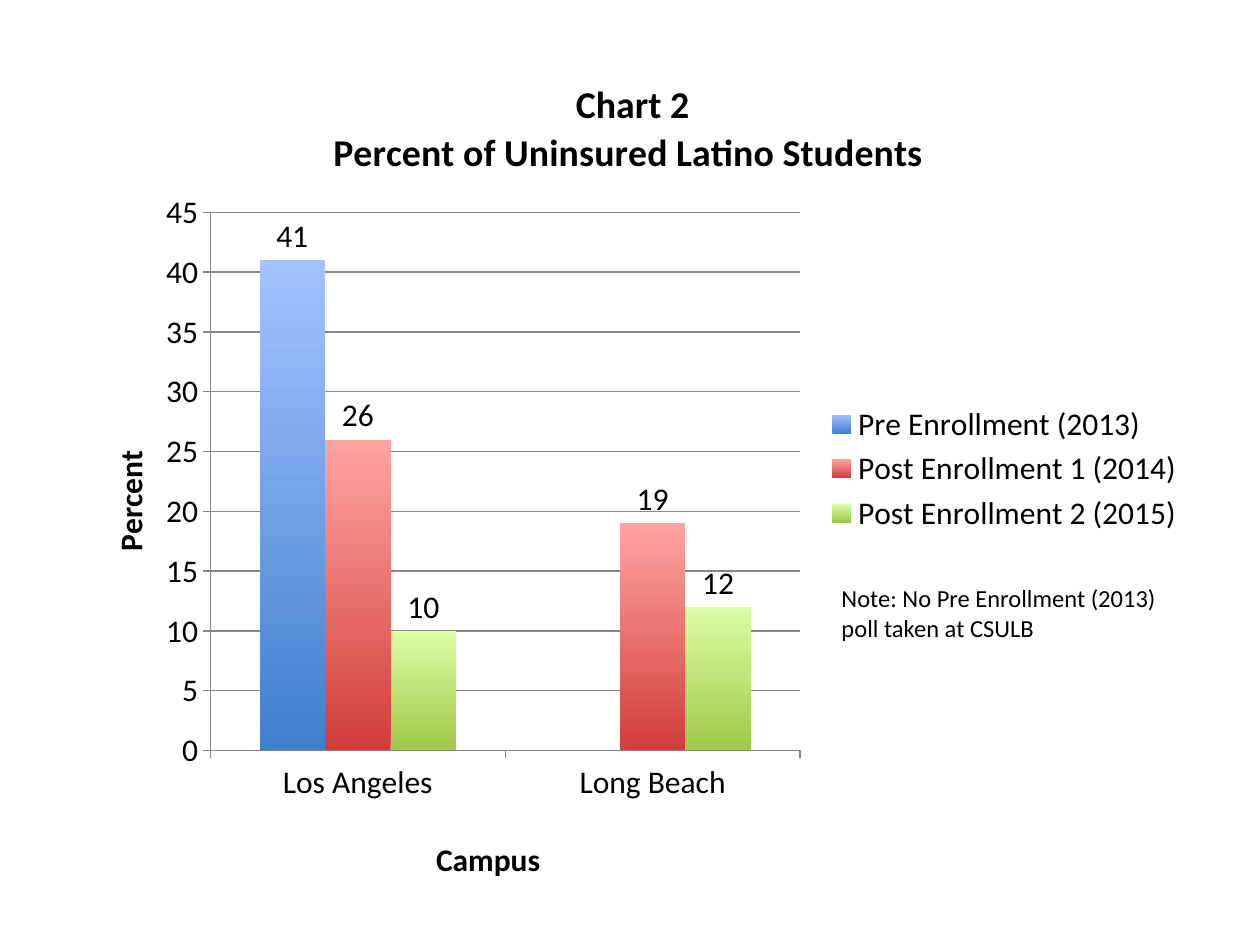
from pptx import Presentation
from pptx import util as u
from pptx.chart.data import CategoryChartData
from pptx.dml.color import RGBColor
from pptx.enum import chart as ch, text as tx
from pptx.oxml import ns, xmlchemy as xc

BLACK = RGBColor(0, 0, 0)
GRID_GRAY = RGBColor(0x86, 0x86, 0x86)
BLUE = RGBColor(0x3F, 0x80, 0xCD), RGBColor(0xA3, 0xC2, 0xFF)
RED = RGBColor(0xD0, 0x3E, 0x3A), RGBColor(0xFF, 0xA4, 0xA1)
GREEN = RGBColor(0x9F, 0xC9, 0x48), RGBColor(0xDA, 0xFF, 0xA4)

CAMPUSES = ["Los Angeles", "Long Beach"]
POLLS = [
    ("Pre Enrollment (2013)", [41, None], BLUE),
    ("Post Enrollment 1 (2014)", [26, 19], RED),
    ("Post Enrollment 2 (2015)", [10, 12], GREEN),
]


def write(frame, words, size=18, bold=False, color=BLACK, font="Calibri"):
    """Fill a text frame, one paragraph for each line of words."""
    for number, line in enumerate(words.split("\n")):
        paragraph = frame.add_paragraph() if number else frame.paragraphs[0]
        run = paragraph.add_run()
        run.text = line
        run.font.size, run.font.bold = u.Pt(size), bold
        run.font.name, run.font.color.rgb = font, color


def place(element, **fractions):
    """Fix a chart part at fractions (x, y, w, h) of the chart area."""
    layout = element.find(ns.qn("c:layout"))
    if layout is None:
        layout = xc.OxmlElement("c:layout")
        element.insert(0, layout)
    manual = xc.OxmlElement("c:manualLayout")
    layout.append(manual)
    settings = {"layoutTarget": "inner"} if "w" in fractions else {}
    settings.update(xMode="edge", yMode="edge", **fractions)
    for tag, value in settings.items():
        setting = xc.OxmlElement("c:" + tag)
        setting.set("val", str(value))
        manual.append(setting)


class Deck:
    def __init__(self, font="Calibri", size=18):
        self.font, self.size = font, size
        self.prs = Presentation()
        self.prs.slide_width, self.prs.slide_height = u.Inches(10), u.Inches(7.5)
        self.slide = self.prs.slides.add_slide(self.prs.slide_layouts[6])

    def note(self, words, left, top, width, height, size):
        box = self.slide.shapes.add_textbox(*map(u.Inches, (left, top, width, height)))
        box.text_frame.word_wrap = True
        box.text_frame.auto_size = tx.MSO_AUTO_SIZE.SHAPE_TO_FIT_TEXT
        write(box.text_frame, words, size=size, font=self.font)

    def heading(self, owner, words, size, x, y):
        """Title a chart or an axis."""
        owner.has_title = True
        title = owner.chart_title if hasattr(owner, "chart_title") else owner.axis_title
        write(title.text_frame, words, size=size, bold=True, font=self.font)
        place(title._element, x=x, y=y)
        return title

    def columns(self, categories, series, left, top, width, height):
        data = CategoryChartData()
        data.categories = categories
        for name, values, _ in series:
            data.add_series(name, values)
        chart = self.slide.shapes.add_chart(
            ch.XL_CHART_TYPE.COLUMN_CLUSTERED,
            *map(u.Inches, (left, top, width, height)), data).chart
        chart.font.size, chart.font.name = u.Pt(self.size), self.font
        chart.font.color.rgb = BLACK
        place(chart._chartSpace.chart.plotArea, x=0.13, y=0.2, w=0.52, h=0.63)

        plot = chart.plots[0]
        plot.gap_width, plot.vary_by_categories = 150, False
        plot.has_data_labels = True
        plot.data_labels.show_value = True
        plot.data_labels.position = ch.XL_LABEL_POSITION.OUTSIDE_END
        for bars, (_, _, shades) in zip(plot.series, series):
            bars.invert_if_negative = False
            fill = bars.format.fill
            fill.gradient()
            fill.gradient_angle = 90
            for stop, shade in zip(fill.gradient_stops, shades):
                stop.color.rgb = shade

        chart.value_axis.maximum_scale = 45
        chart.value_axis.minimum_scale = 0
        chart.value_axis.major_unit = 5
        chart.value_axis.has_major_gridlines = True
        for part in (chart.category_axis, chart.value_axis,
                     chart.value_axis.major_gridlines):
            part.format.line.color.rgb = GRID_GRAY
            part.format.line.width = u.Pt(0.75)
        for axis in (chart.category_axis, chart.value_axis):
            axis.major_tick_mark = ch.XL_TICK_MARK.OUTSIDE

        chart.has_legend = True
        chart.legend.position = ch.XL_LEGEND_POSITION.RIGHT
        chart.legend.include_in_layout = False
        return chart


def main():
    deck = Deck()
    chart = deck.columns(CAMPUSES, POLLS, 0.5, 0.33, 9, 6.78)
    deck.heading(chart, "Chart 2\nPercent of Uninsured Latino Students ", 21.6, 0.235, 0.04)
    deck.heading(chart.category_axis, "Campus", 18, 0.324, 0.925)
    percent = deck.heading(chart.value_axis, "Percent", 18, 0.035, 0.472)
    turned = percent.text_frame._txBody.bodyPr
    turned.set("rot", "-5400000")
    turned.set("vert", "horz")
    deck.note("Note: No Pre Enrollment (2013) poll taken at CSULB",
              6.58, 4.58, 2.92, 0.57, size=14)
    deck.prs.save("out.pptx")


if __name__ == "__main__":
    main()
